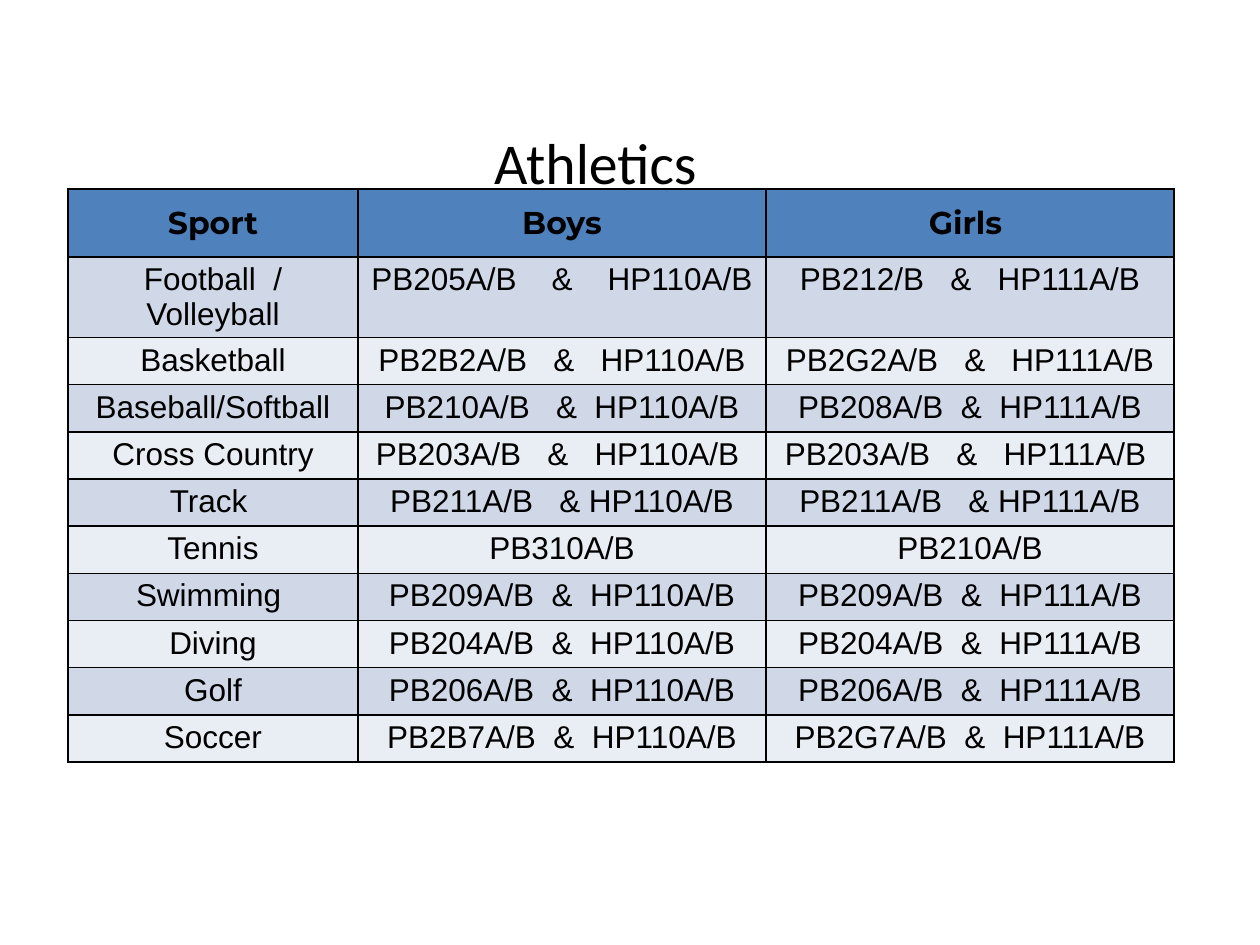
import pptx
import pptx.dml.color
import pptx.enum.text
import pptx.oxml
import pptx.oxml.ns
import pptx.util

EMU_PER_PX = 914400 / 126
COLORS = {
    "ink": "000000",
    "header": "4F81BD",
    "odd_row": "D0D8E8",
    "even_row": "E9EDF4",
}
HEADINGS = ("Sport", "Boys", "Girls ")
SPORTS = (
    ("Football  / Volleyball", "PB205A/B    &    HP110A/B", "PB212/B   &   HP111A/B"),
    ("Basketball", "PB2B2A/B   &   HP110A/B", "PB2G2A/B   &   HP111A/B"),
    ("Baseball/Softball", "PB210A/B   &  HP110A/B", "PB208A/B  &  HP111A/B"),
    ("Cross Country", "PB203A/B   &   HP110A/B ", "PB203A/B   &   HP111A/B "),
    ("Track ", "PB211A/B   & HP110A/B", "PB211A/B   & HP111A/B"),
    ("Tennis", "PB310A/B", "PB210A/B"),
    ("Swimming ", "PB209A/B  &  HP110A/B", "PB209A/B  &  HP111A/B"),
    ("Diving", "PB204A/B  &  HP110A/B", "PB204A/B  &  HP111A/B"),
    ("Golf", "PB206A/B  &  HP110A/B", "PB206A/B  &  HP111A/B"),
    ("Soccer", "PB2B7A/B  &  HP110A/B", "PB2G7A/B  &  HP111A/B"),
)
COLUMN_WIDTHS = (290, 408, 408)
TABLE_HEIGHT = 540
HEADER_HEIGHT = 68


def px(length):
    return pptx.util.Emu(round(length * EMU_PER_PX))


def color(name):
    return pptx.dml.color.RGBColor.from_string(COLORS[name])


def write_text(frame, text, font="Arial", size=18, bold=False, ink="ink"):
    para = frame.paragraphs[0]
    para.alignment = pptx.enum.text.PP_ALIGN.CENTER
    span = para.add_run()
    span.text = text
    span.font.name = font
    span.font.size = pptx.util.Pt(size)
    span.font.bold = bold
    span.font.color.rgb = color(ink)


def add_title(page, text):
    box = page.shapes.title
    box.left, box.top, box.width, box.height = map(px, (58, 102, 1075, 118))
    frame = box.text_frame
    frame.auto_size = pptx.enum.text.MSO_AUTO_SIZE.NONE
    frame.vertical_anchor = pptx.enum.text.MSO_ANCHOR.MIDDLE
    write_text(frame, text, font="Calibri", size=33)


def add_borders(cell):
    properties = cell._tc.get_or_add_tcPr()
    for position, side in enumerate(("lnL", "lnR", "lnT", "lnB")):
        border = pptx.oxml.parse_xml(
            f'<a:{side} {pptx.oxml.ns.nsdecls("a")} w="{pptx.util.Pt(1)}">'
            f'<a:solidFill><a:srgbClr val="{COLORS["ink"]}"/></a:solidFill>'
            f"</a:{side}>"
        )
        properties.insert(position, border)


def format_cell(cell, text, fill, anchor, **text_format):
    cell.margin_left = cell.margin_right = px(9)
    cell.margin_top = cell.margin_bottom = px(5)
    cell.vertical_anchor = anchor
    cell.fill.solid()
    cell.fill.fore_color.rgb = color(fill)
    write_text(cell.text_frame, text, **text_format)
    add_borders(cell)


def add_schedule(page):
    table = page.shapes.add_table(
        len(SPORTS) + 1, len(HEADINGS),
        px(68), px(189), px(sum(COLUMN_WIDTHS)), px(TABLE_HEIGHT),
    ).table
    for column, width in zip(table.columns, COLUMN_WIDTHS):
        column.width = px(width)
    row_height = (TABLE_HEIGHT - HEADER_HEIGHT) / len(SPORTS)
    for row in table.rows:
        row.height = px(row_height)
    table.rows[0].height = px(HEADER_HEIGHT)

    anchors = pptx.enum.text.MSO_ANCHOR
    for column, heading in enumerate(HEADINGS):
        format_cell(table.cell(0, column), heading, "header", anchors.MIDDLE,
                    font="Montserrat", bold=True)
    for row, entries in enumerate(SPORTS, start=1):
        fill = "odd_row" if row % 2 else "even_row"
        for column, entry in enumerate(entries):
            format_cell(table.cell(row, column), entry, fill, anchors.TOP)


def main():
    deck = pptx.Presentation()
    deck.slide_width, deck.slide_height = px(1260), px(945)
    page = deck.slides.add_slide(deck.slide_layouts[5])
    add_title(page, "Athletics")
    add_schedule(page)
    deck.save("out.pptx")


if __name__ == "__main__":
    main()
